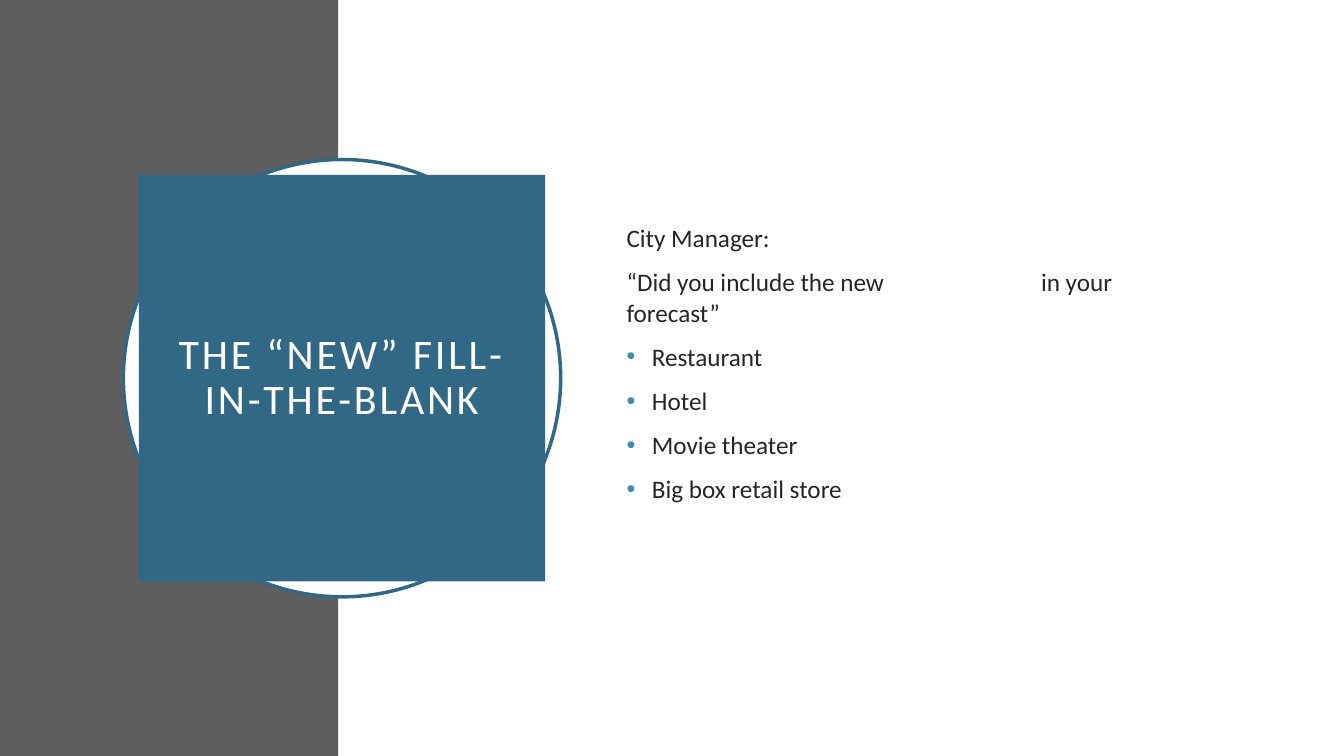
"""Build the fill-in-the-blank title and quote slide."""
import pptx
import pptx.dml.color
import pptx.enum.shapes
import pptx.enum.text
import pptx.oxml
import pptx.oxml.ns
import pptx.util

Cm, Pt = pptx.util.Cm, pptx.util.Pt
SHAPES = pptx.enum.shapes.MSO_SHAPE
FONT = "Calibri"
GRAY, WHITE, BLUE = "5E5E5E", "FFFFFF", "316886"
TEXT_COLOR, BULLET_COLOR = "262626", "418AB3"
TITLE = "THE “NEW” FILL-IN-THE-BLANK"
SPEAKER = "City Manager:"
QUOTE = ["“Did you include the new ", "\t\t", "  in your forecast”"]
EXAMPLES = ["Restaurant", "Hotel", "Movie theater", "Big box retail store"]

SLIDE_WIDTH, SLIDE_HEIGHT = 33.87, 19.05
BAND_WIDTH = 8.53
CENTER_X, CENTER_Y = 8.62, 9.53
CIRCLE_SIZE, TITLE_SIZE = 11.02, 10.24
TITLE_INSET = 0.51
BODY_BOX = (15.54, 3.89, 14.78, 11.25)
BODY_BOTTOM_INSET = 0.85
BULLET_INDENT = 0.64
BLANK_STOPS = (7.62, 10.16)


def color(hex_value):
    return pptx.dml.color.RGBColor.from_string(hex_value)


def add_block(slide, kind, box, fill, line=None):
    shape = slide.shapes.add_shape(kind, *map(Cm, box))
    shape.shadow.inherit = False
    shape.fill.solid()
    shape.fill.fore_color.rgb = color(fill)
    if line:
        shape.line.color.rgb = color(line)
        shape.line.width = Pt(2.5)
    else:
        shape.line.fill.background()
    return shape


def centered_square(size):
    return CENTER_X - size / 2, CENTER_Y - size / 2, size, size


def format_runs(paragraph, size, hex_value):
    for run in paragraph.runs:
        run.font.name = FONT
        run.font.size = Pt(size)
        run.font.color.rgb = color(hex_value)


def add_bullet(paragraph):
    properties = paragraph._p.get_or_add_pPr()
    properties.set("marL", str(Cm(BULLET_INDENT)))
    properties.set("indent", str(-Cm(BULLET_INDENT)))
    namespace = pptx.oxml.ns.nsdecls("a")
    for tag in (f'<a:buClr {namespace}><a:srgbClr val="{BULLET_COLOR}"/></a:buClr>',
                f'<a:buFont {namespace} typeface="Arial"/>',
                f'<a:buChar {namespace} char="•"/>'):
        properties.append(pptx.oxml.parse_xml(tag))


def add_tab_stops(paragraph, positions):
    stops = "".join(f'<a:tab pos="{Cm(position)}" algn="l"/>' for position in positions)
    tab_list = f'<a:tabLst {pptx.oxml.ns.nsdecls("a")}>{stops}</a:tabLst>'
    paragraph._p.get_or_add_pPr().append(pptx.oxml.parse_xml(tab_list))


def add_title(slide):
    shape = add_block(slide, SHAPES.RECTANGLE, centered_square(TITLE_SIZE), BLUE)
    frame = shape.text_frame
    frame.word_wrap = True
    frame.vertical_anchor = pptx.enum.text.MSO_ANCHOR.MIDDLE
    frame.margin_left = frame.margin_right = Cm(TITLE_INSET)
    frame.margin_top = frame.margin_bottom = Cm(TITLE_INSET)
    frame.text = TITLE
    paragraph = frame.paragraphs[0]
    paragraph.alignment = pptx.enum.text.PP_ALIGN.CENTER
    paragraph.line_spacing = 0.9
    format_runs(paragraph, 30, WHITE)
    paragraph.runs[0].font._element.set("spc", "200")


def add_body(slide):
    frame = slide.shapes.add_textbox(*map(Cm, BODY_BOX)).text_frame
    frame.word_wrap = True
    frame.vertical_anchor = pptx.enum.text.MSO_ANCHOR.MIDDLE
    frame.margin_bottom = Cm(BODY_BOTTOM_INSET)
    frame.text = SPEAKER
    quote = frame.add_paragraph()
    for part in QUOTE:
        run = quote.add_run()
        run.text = part
        run.font.underline = not part.strip()
    for example in EXAMPLES:
        paragraph = frame.add_paragraph()
        paragraph.text = example
    for index, paragraph in enumerate(frame.paragraphs):
        paragraph.space_before = Pt(10)
        format_runs(paragraph, 18, TEXT_COLOR)
        if index > 1:
            add_bullet(paragraph)
    add_tab_stops(quote, BLANK_STOPS)


def main():
    presentation = pptx.Presentation()
    presentation.slide_width = Cm(SLIDE_WIDTH)
    presentation.slide_height = Cm(SLIDE_HEIGHT)
    slide = presentation.slides.add_slide(presentation.slide_layouts[6])
    add_block(slide, SHAPES.RECTANGLE, (0, 0, BAND_WIDTH, SLIDE_HEIGHT), GRAY)
    add_block(slide, SHAPES.RECTANGLE,
              (BAND_WIDTH, 0, SLIDE_WIDTH - BAND_WIDTH, SLIDE_HEIGHT), WHITE)
    add_block(slide, SHAPES.OVAL, centered_square(CIRCLE_SIZE), WHITE, BLUE)
    add_title(slide)
    add_body(slide)
    presentation.save("out.pptx")


if __name__ == "__main__":
    main()
